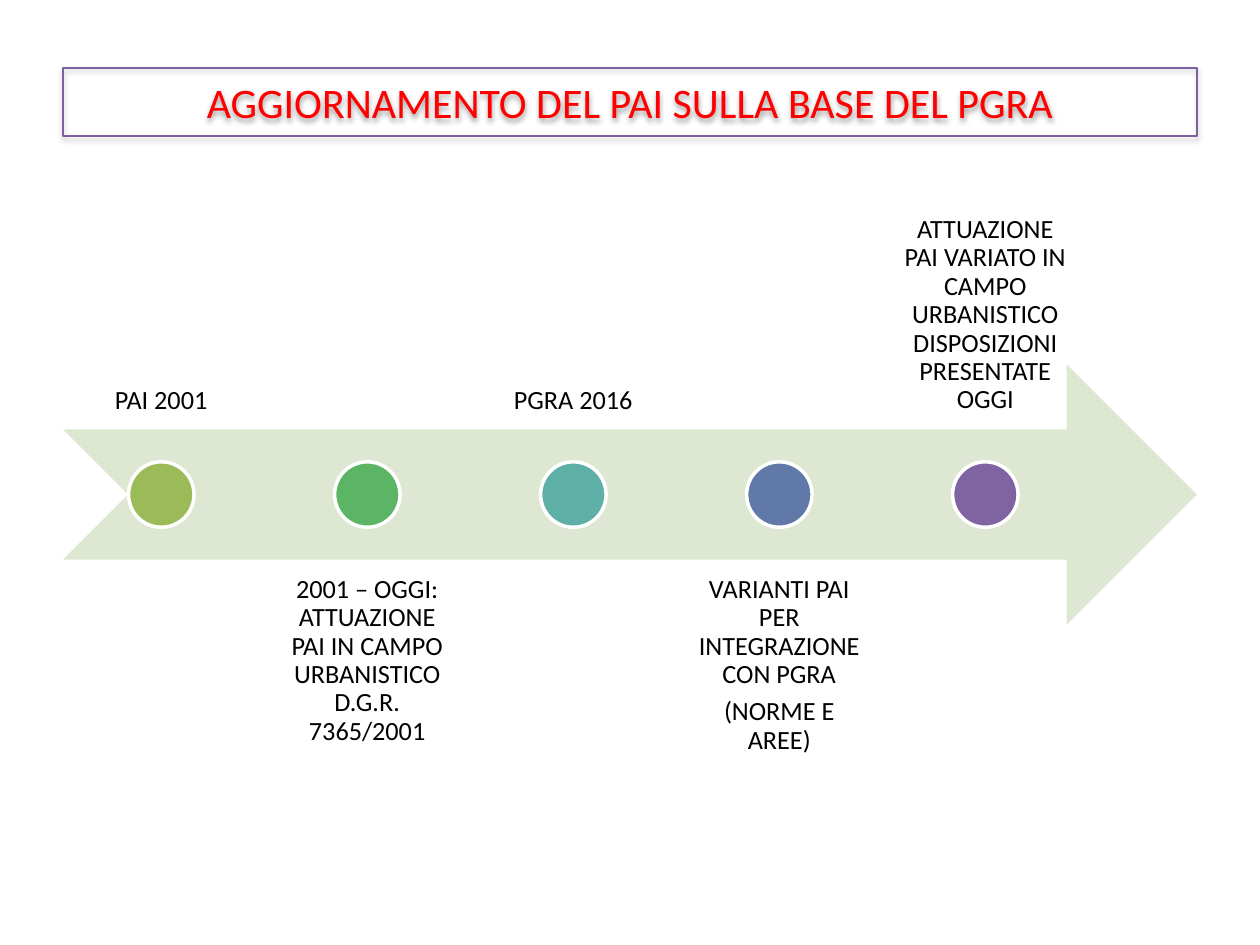
from dataclasses import dataclass

from lxml import etree
from pptx import Presentation
from pptx import util as u
from pptx.dml.color import RGBColor
from pptx.enum import shapes, text
from pptx.oxml.ns import qn

HUES = {
    "title": "FF0000", "frame": "7D60A0", "text": "000000",
    "arrow": "DEE7D1", "ring": "FFFFFF", "shade": "000000",
    "lime": "9BBB59", "green": "5CB565", "teal": "5EAFA6",
    "blue": "6179A8", "violet": "8064A2",
}
LEFT, STEP = 0.5, 1.635      # first label and label pitch
WIDE, BAND = 1.56, 2.07      # label width, height of labels and arrow
TOP, ARROW, LOW = 1.34, 2.89, 4.45
DOT = 0.52


@dataclass
class Stage:
    hue: str
    lines: list[str]


STAGES = [
    Stage("lime", ["PAI 2001"]),
    Stage("green", ["2001 – OGGI: ATTUAZIONE PAI IN CAMPO URBANISTICO D.G.R. 7365/2001"]),
    Stage("teal", ["PGRA 2016"]),
    Stage("blue", ["VARIANTI PAI PER INTEGRAZIONE CON PGRA", "(NORME E AREE)"]),
    Stage("violet", ["ATTUAZIONE PAI VARIATO IN CAMPO URBANISTICO DISPOSIZIONI PRESENTATE OGGI"]),
]


def color(name: str) -> RGBColor:
    return RGBColor.from_string(HUES[name])


def add_text(slide, box: tuple, lines: list[str], *, size: float, hue: str = "text",
             anchor=text.MSO_ANCHOR.TOP, inset: float = 0.12,
             spacing: float = 1.0, gap: float = 0):
    shape = slide.shapes.add_textbox(*map(u.Inches, box))
    frame = shape.text_frame
    frame.word_wrap = True
    frame.vertical_anchor = anchor
    frame.margin_left = frame.margin_right = u.Inches(inset)
    frame.margin_top = frame.margin_bottom = u.Inches(inset)
    for i, line in enumerate(lines):
        para = frame.add_paragraph() if i else frame.paragraphs[0]
        para.text = line
        para.alignment = text.PP_ALIGN.CENTER
        para.line_spacing = spacing
        if i < len(lines) - 1:
            para.space_after = u.Pt(gap)
        para.font.name = "Calibri"
        para.font.size = u.Pt(size)
        para.font.color.rgb = color(hue)
    return shape


def add_form(slide, kind, box: tuple, fill: str, line: str | None = None):
    shape = slide.shapes.add_shape(kind, *map(u.Inches, box))
    shape.shadow.inherit = False
    shape.fill.solid()
    shape.fill.fore_color.rgb = color(fill)
    if line:
        shape.line.color.rgb = color(line)
        shape.line.width = u.Pt(2)
    else:
        shape.line.fill.background()
    return shape


def add_shade(shape) -> None:
    """Cast a soft shadow straight down."""
    shape.shadow.inherit = False
    effects = shape._element.spPr.find(qn("a:effectLst"))
    cast = etree.SubElement(effects, qn("a:outerShdw"), blurRad=str(u.Pt(3.1)),
                            dist=str(u.Pt(1.6)), dir="5400000", rotWithShape="0")
    tint = etree.SubElement(cast, qn("a:srgbClr"), val=HUES["shade"])
    etree.SubElement(tint, qn("a:alpha"), val="38000")


def add_stage(slide, index: int, stage: Stage) -> None:
    left = LEFT + index * STEP
    below = index % 2 == 1
    add_text(slide, (left, LOW if below else TOP, WIDE, BAND), stage.lines,
             size=15, spacing=0.9, gap=5,
             anchor=text.MSO_ANCHOR.TOP if below else text.MSO_ANCHOR.BOTTOM)
    add_form(slide, shapes.MSO_SHAPE.OVAL,
             (left + (WIDE - DOT) / 2, ARROW + (BAND - DOT) / 2, DOT, DOT),
             stage.hue, "ring")


def main() -> None:
    deck = Presentation()
    deck.slide_width, deck.slide_height = u.Inches(10), u.Inches(7.5)
    slide = deck.slides.add_slide(deck.slide_layouts[6])

    # Framed title
    title = add_text(slide, (LEFT, 0.54, 9, 0.54),
                     ["AGGIORNAMENTO DEL PAI SULLA BASE DEL PGRA"],
                     size=24, hue="title", inset=0.05, anchor=text.MSO_ANCHOR.MIDDLE)
    title.line.color.rgb = color("frame")
    title.line.width = u.Pt(0.75)
    add_shade(title)

    # Timeline arrow with its stages
    add_form(slide, shapes.MSO_SHAPE.NOTCHED_RIGHT_ARROW, (LEFT, ARROW, 9, BAND), "arrow")
    for index, stage in enumerate(STAGES):
        add_stage(slide, index, stage)

    deck.save("out.pptx")


if __name__ == "__main__":
    main()
